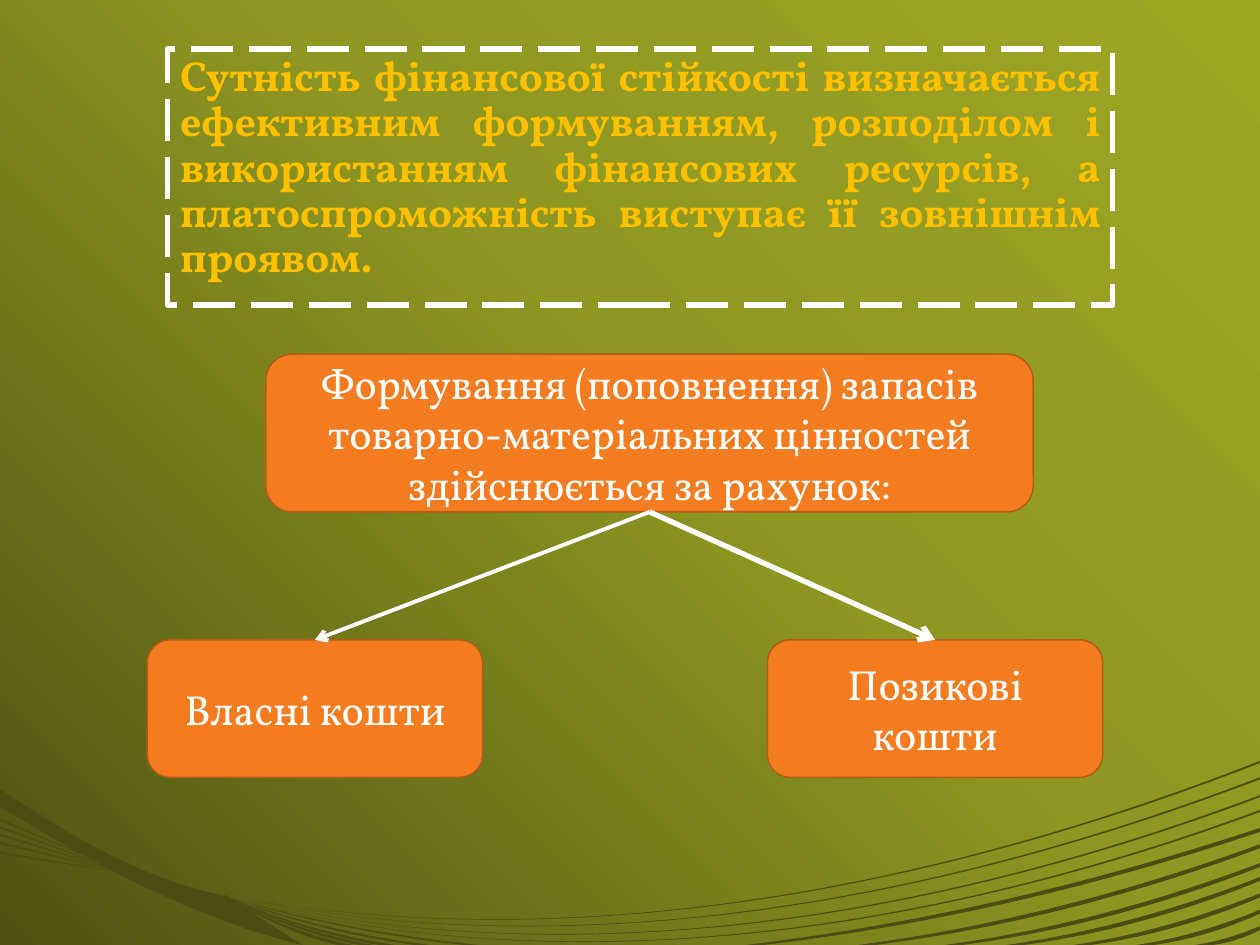
from copy import deepcopy
from dataclasses import dataclass

from lxml.etree import SubElement
from pptx import Presentation
from pptx.dml.color import RGBColor as Rgb
from pptx.enum.dml import MSO_LINE as Dash
from pptx.enum.shapes import MSO_CONNECTOR as Link, MSO_SHAPE as Form
from pptx.enum.text import MSO_ANCHOR as Anchor, PP_ALIGN as Align
from pptx.oxml.ns import qn
from pptx.util import Cm, Pt


@dataclass(frozen=True)
class Theme:
    font: str = "Vollkorn"
    size: int = 24
    white: str = "FFFFFF"
    gold: str = "FFC000"
    orange: str = "F37B20"
    rust: str = "B45B18"
    olive: str = "4A4E11"
    backdrop: tuple = ((0, "9DA625"), (0.45, "8E9721"), (1, "4E5312"))


THEME = Theme()
WIDTH, HEIGHT = 25.4, 19.05

ESSENCE = ("Сутність фінансової стійкості визначається ефективним формуванням, "
           "розподілом і використанням фінансових ресурсів, "
           "а платоспроможність виступає її зовнішнім проявом.")
ESSENCE_BOX = (3.38, 0.99, 19.05, 5.16)
FORMATION = ("Формування (поповнення) запасів товарно-матеріальних цінностей "
             "здійснюється за рахунок:")
FORMATION_BOX = (5.36, 7.14, 15.47, 3.18)
SOURCES = [("Власні кошти", 2.97, 2.25), ("Позикові кошти", 15.47, 3)]
SOURCE_TOP, SOURCE_WIDTH, SOURCE_HEIGHT = 12.9, 6.76, 2.77

WEDGE = ([(0, 15.9), (1.52, 16.94), (3.05, 17.78), (4.57, 18.06)], (0, 0.36), (1.52, 0.99))
LONG_WAVES = [
    [(4.57, 18.06), (11.43, 19.3), (18.67, 17.98), (WIDTH, 15.34)],
    [(5.26, 18.19), (12.01, 19.43), (19.02, 18.11), (WIDTH, 15.67)],
    [(4.9, 18.14), (11.76, 19.69), (18.92, 18.47), (WIDTH, 16.03)],
    [(4.67, 18.11), (11.58, 19.89), (18.85, 18.75), (WIDTH, 16.33)],
]
RIGHT_WAVES = [(15.04, 16.69), (17.3, 17.02), (19.05, 17.4), (20.29, 17.68),
               (21.64, 18.01), (22.91, 18.34), (24.1, 18.67)]
LEFT_FEET = [6.81, 7.24, 7.65, 8.36, 9.35]
LEFT_FAN_TIP = (4.6, 18.1)
HAIRLINES = [16.51, 16.66, 16.81, 16.97, 17.17]
HAIRLINE_TIP = (2.6, 17.62)


def mix(start, end, across, up=None):
    """Return the point at the given shares of the way between two points."""
    shares = (across, across if up is None else up)
    return tuple(a + (b - a) * share for a, b, share in zip(start, end, shares))


def sweep(foot, tip):
    """Return a cubic that leaves the bottom edge flat and steepens to its tip."""
    start = (foot, HEIGHT)
    return [start, mix(start, tip, 0.34, 0.18), mix(start, tip, 0.67, 0.52), tip]


def ribbon(cubic, start_gap, end_gap):
    """Return the control points of a curve and of its shifted lower edge."""
    lower = []
    for order, (x, y) in enumerate(cubic):
        dx, dy = mix(start_gap, end_gap, order / 3)
        lower.append((x + dx, y + dy))
    return [(Cm(x), Cm(y)) for x, y in cubic + lower[::-1]]


def paint_backdrop(slide):
    """Fill the background with the three-stop gradient."""
    fill = slide.background.fill
    fill.gradient()
    fill.gradient_angle = 225
    stop_list = slide.element.xpath(".//a:gsLst")[0]
    stop_list.append(deepcopy(stop_list[0]))
    for stop, (position, colour) in zip(fill.gradient_stops, THEME.backdrop):
        stop.position = position
        stop.color.rgb = Rgb.from_string(colour)


def bend(outline):
    """Turn each edge of three line segments into one cubic curve."""
    for start in outline.findall(qn("a:moveTo")):
        segments = list(start.itersiblings())[:7]
        for edge in (segments[:3], segments[4:]):
            curve = outline.makeelement(qn("a:cubicBezTo"))
            edge[0].addprevious(curve)
            for segment in edge:
                curve.append(segment[0])
                outline.remove(segment)


def draw_waves(slide):
    """Draw the swoosh along the foot of the slide."""
    ribbons = [ribbon(*WEDGE)]
    ribbons += [ribbon(wave, (0, 0), (0, 0.04)) for wave in LONG_WAVES]
    ribbons += [ribbon(sweep(foot, (WIDTH, y)), (0.35, 0), (0, 0.08)) for foot, y in RIGHT_WAVES]
    ribbons += [ribbon(sweep(foot, LEFT_FAN_TIP), (0.3, 0), (0, 0)) for foot in LEFT_FEET]
    ribbons += [ribbon([mix((0, y), HAIRLINE_TIP, n / 3) for n in range(4)], (0, 0.04), (0, 0))
                for y in HAIRLINES]
    first, *rest = ribbons
    builder = slide.shapes.build_freeform(*first[0])
    builder.add_line_segments(first[1:])
    for points in rest:
        builder.move_to(*points[0])
        builder.add_line_segments(points[1:])
    swoosh = builder.convert_to_shape()
    outline = swoosh.element.xpath(".//a:path")[0]
    bend(outline)
    swoosh.height = Cm(HEIGHT) - swoosh.top
    outline.set("h", str(int(swoosh.height)))
    swoosh.shadow.inherit = False
    swoosh.fill.solid()
    swoosh.fill.fore_color.rgb = Rgb.from_string(THEME.olive)
    swoosh.line.fill.background()


def add_panel(slide, text, box, *, form=Form.ROUNDED_RECTANGLE, fill=THEME.orange,
              line=THEME.rust, weight=0.85, dash=None, color=THEME.white, bold=False,
              align=Align.CENTER, anchor=Anchor.MIDDLE, spacing=None):
    """Add a panel with formatted text."""
    panel = slide.shapes.add_shape(form, *map(Cm, box))
    panel.shadow.inherit = False
    if fill:
        panel.fill.solid()
        panel.fill.fore_color.rgb = Rgb.from_string(fill)
    else:
        panel.fill.background()
    panel.line.color.rgb = Rgb.from_string(line)
    panel.line.width = Pt(weight)
    if dash:
        panel.line.dash_style = dash
    frame = panel.text_frame
    frame.word_wrap = True
    frame.vertical_anchor = anchor
    paragraph = frame.paragraphs[0]
    paragraph.alignment = align
    paragraph.line_spacing = spacing
    run = paragraph.add_run()
    run.text = text
    run.font.name, run.font.size, run.font.bold = THEME.font, Pt(THEME.size), bold
    run.font.color.rgb = Rgb.from_string(color)
    return panel


def add_arrow(slide, origin, target, weight):
    """Connect the bottom of one panel to the top of another."""
    arrow = slide.shapes.add_connector(Link.STRAIGHT, 0, 0, 0, 0)
    arrow.begin_connect(origin, 2)
    arrow.end_connect(target, 0)
    arrow.line.color.rgb = Rgb.from_string(THEME.white)
    arrow.line.width = Pt(weight)
    SubElement(arrow.element.xpath(".//a:ln")[0], qn("a:tailEnd"), type="arrow")
    SubElement(arrow.element.spPr, qn("a:effectLst"))


def main():
    """Build the slide and save it."""
    deck = Presentation()
    deck.slide_width, deck.slide_height = Cm(WIDTH), Cm(HEIGHT)
    slide = deck.slides.add_slide(deck.slide_layouts[6])
    paint_backdrop(slide)
    draw_waves(slide)
    add_panel(slide, ESSENCE, ESSENCE_BOX, form=Form.RECTANGLE, fill=None, line=THEME.white,
              weight=3, dash=Dash.LONG_DASH, color=THEME.gold, bold=True,
              align=Align.JUSTIFY, anchor=Anchor.TOP, spacing=0.9)
    formation = add_panel(slide, FORMATION, FORMATION_BOX)
    sources = [add_panel(slide, text, (left, SOURCE_TOP, SOURCE_WIDTH, SOURCE_HEIGHT))
               for text, left, _ in SOURCES]
    for source, (_, _, weight) in zip(sources, SOURCES):
        add_arrow(slide, formation, source, weight)
    deck.save("out.pptx")


if __name__ == "__main__":
    main()
